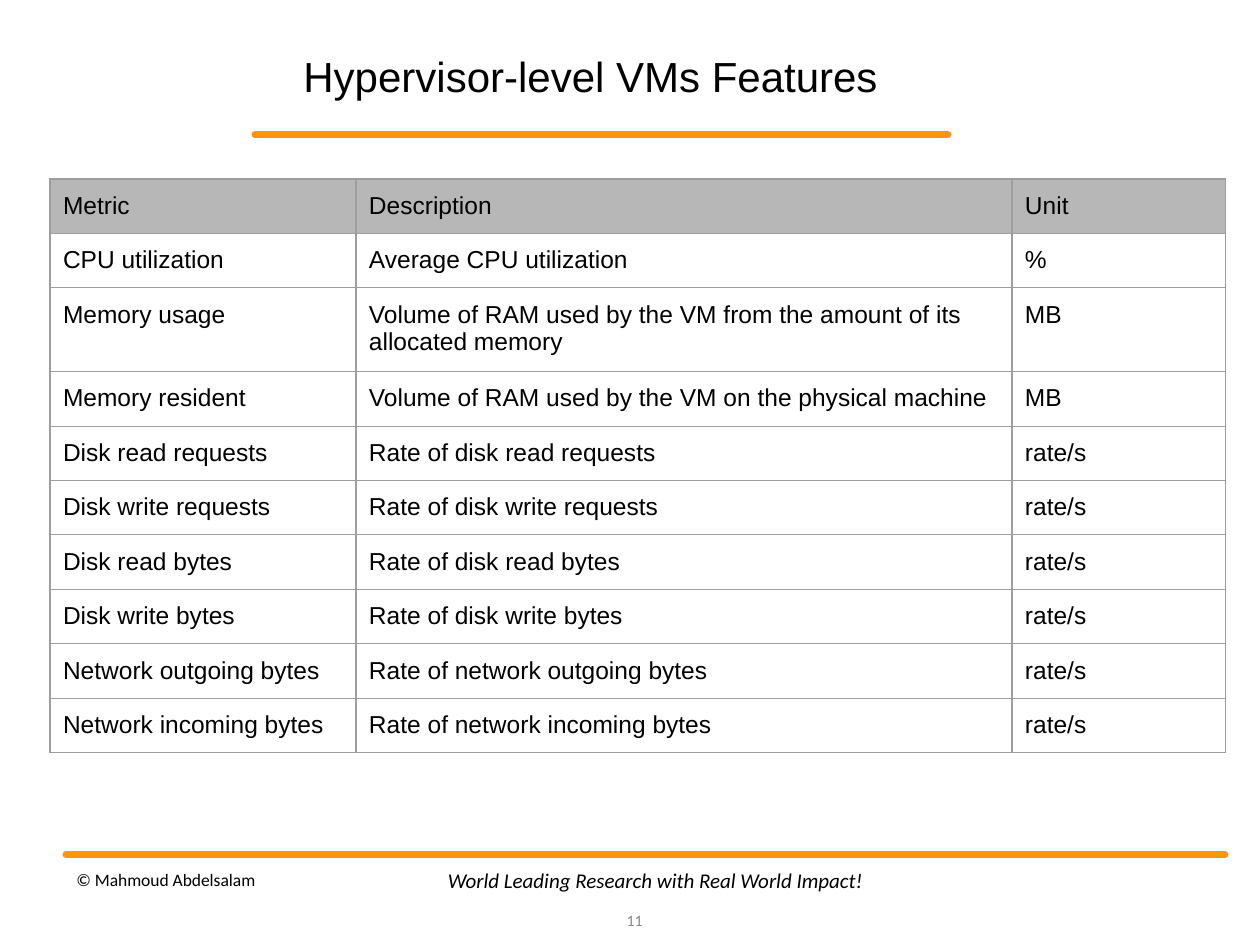
import pptx
import pptx.dml.color
import pptx.enum.shapes
import pptx.enum.text
import pptx.oxml
import pptx.oxml.ns
import pptx.util
from lxml import etree

EMU_PER_PX = 914400 / 126
ORANGE, BLACK, GREY = "FF950E", "000000", "888888"
HEADER_FILL, BORDER = "B7B7B7", "9E9E9E"
ALIGN = pptx.enum.text.PP_ALIGN
ANCHOR = pptx.enum.text.MSO_ANCHOR
TITLE_FONT = {"name": "Arial", "size": pptx.util.Pt(24)}
TABLE_FONT = {"name": "Arial", "size": pptx.util.Pt(14)}
AUTHOR_FONT = {"name": "Calibri", "size": pptx.util.Pt(10)}
MOTTO_FONT = {"name": "Calibri", "size": pptx.util.Pt(12), "italic": True}
NUMBER_FONT = {"name": "Calibri", "size": pptx.util.Pt(9)}
CELL_MARGINS = {"margin_left": 13, "margin_right": 13, "margin_top": 13, "margin_bottom": 12}
COLUMN_WIDTHS = [306, 656, 214]
ROW_HEIGHT = 52
METRICS = [
    ("Metric", "Description", "Unit"),
    ("CPU utilization", "Average CPU utilization", "%"),
    ("Memory usage", "Volume of RAM used by the VM from the amount of its allocated memory", "MB"),
    ("Memory resident", "Volume of RAM used by the VM on the physical machine", "MB"),
] + [
    (name, f"Rate of {name[0].lower()}{name[1:]}", "rate/s")
    for name in (
        "Disk read requests", "Disk write requests", "Disk read bytes",
        "Disk write bytes", "Network outgoing bytes", "Network incoming bytes",
    )
]


def px(length):
    """Turn pixels into EMU."""
    return pptx.util.Emu(round(length * EMU_PER_PX))


def color(value):
    """Turn a hex string into a colour."""
    return pptx.dml.color.RGBColor.from_string(value)


def write(paragraph, text, font, text_color=BLACK, align=ALIGN.LEFT):
    """Fill a paragraph with one formatted run."""
    paragraph.alignment = align
    run = paragraph.add_run()
    run.text = text
    for name, value in font.items():
        setattr(run.font, name, value)
    run.font.color.rgb = color(text_color)


def add_text(slide, box, text, font, text_color=BLACK, align=ALIGN.LEFT, anchor=ANCHOR.MIDDLE):
    """Add a wrapped text box."""
    frame = slide.shapes.add_textbox(*map(px, box)).text_frame
    frame.word_wrap = True
    frame.vertical_anchor = anchor
    write(frame.paragraphs[0], text, font, text_color, align)


def add_rule(slide, left, top, width):
    """Add a horizontal orange rule with round ends."""
    rule = slide.shapes.add_connector(
        pptx.enum.shapes.MSO_CONNECTOR.STRAIGHT, px(left), px(top), px(left + width), px(top))
    rule.line.color.rgb = color(ORANGE)
    rule.line.width = pptx.util.Pt(4)
    rule.line._get_or_add_ln().set("cap", "rnd")
    etree.SubElement(rule._element.spPr, pptx.oxml.ns.qn("a:effectLst"))


def add_borders(cell):
    """Draw a thin grey border on all four sides of a cell."""
    namespace = pptx.oxml.ns.nsdecls("a")
    properties = cell._tc.get_or_add_tcPr()
    for position, side in enumerate(("lnL", "lnR", "lnT", "lnB")):
        properties.insert(position, pptx.oxml.parse_xml(
            f'<a:{side} {namespace} w="{pptx.util.Pt(0.75)}"><a:solidFill>'
            f'<a:srgbClr val="{BORDER}"/></a:solidFill></a:{side}>'))


def add_heading(slide, left, top, width, height):
    """Place the title and the rule below it."""
    add_text(slide, (left, top, width, height), "Hypervisor-level VMs Features",
             TITLE_FONT, align=ALIGN.CENTER, anchor=ANCHOR.BOTTOM)
    add_rule(slide, left + 4, top + height + 28, 693)


def add_metrics(slide, left, top):
    """Place the table of metrics."""
    table = slide.shapes.add_table(
        len(METRICS), len(COLUMN_WIDTHS), px(left), px(top),
        px(sum(COLUMN_WIDTHS)), px(ROW_HEIGHT * len(METRICS))).table
    table.horz_banding = False
    for column, width in zip(table.columns, COLUMN_WIDTHS):
        column.width = px(width)
    for row_index, values in enumerate(METRICS):
        table.rows[row_index].height = px(ROW_HEIGHT)
        for cell, text in zip(table.rows[row_index].cells, values):
            for name, value in CELL_MARGINS.items():
                setattr(cell, name, px(value))
            write(cell.text_frame.paragraphs[0], text, TABLE_FONT | {"bold": False})
            if row_index == 0:
                cell.fill.solid()
                cell.fill.fore_color.rgb = color(HEADER_FILL)
            else:
                cell.fill.background()
            add_borders(cell)


def add_footer(slide, left, top, width):
    """Place the footer rule, author, motto and slide number."""
    add_rule(slide, left, top, width)
    add_text(slide, (left - 2, top + 2, 346, 45), "© Mahmoud Abdelsalam", AUTHOR_FONT)
    add_text(slide, (left + 314, top, 551, 50), "World Leading Research with Real World Impact!",
             MOTTO_FONT, align=ALIGN.CENTER)
    add_text(slide, (left + 539, top + 40, 50, 50), "11", NUMBER_FONT, GREY, ALIGN.RIGHT)


def main():
    """Build the slide and save it."""
    presentation = pptx.Presentation()
    presentation.slide_width, presentation.slide_height = px(1260), px(945)
    slide = presentation.slides.add_slide(presentation.slide_layouts[6])
    add_heading(slide, 251, 43, 679, 64)
    add_metrics(slide, 50, 179)
    add_footer(slide, 66, 855, 1159)
    presentation.save("out.pptx")


if __name__ == "__main__":
    main()
